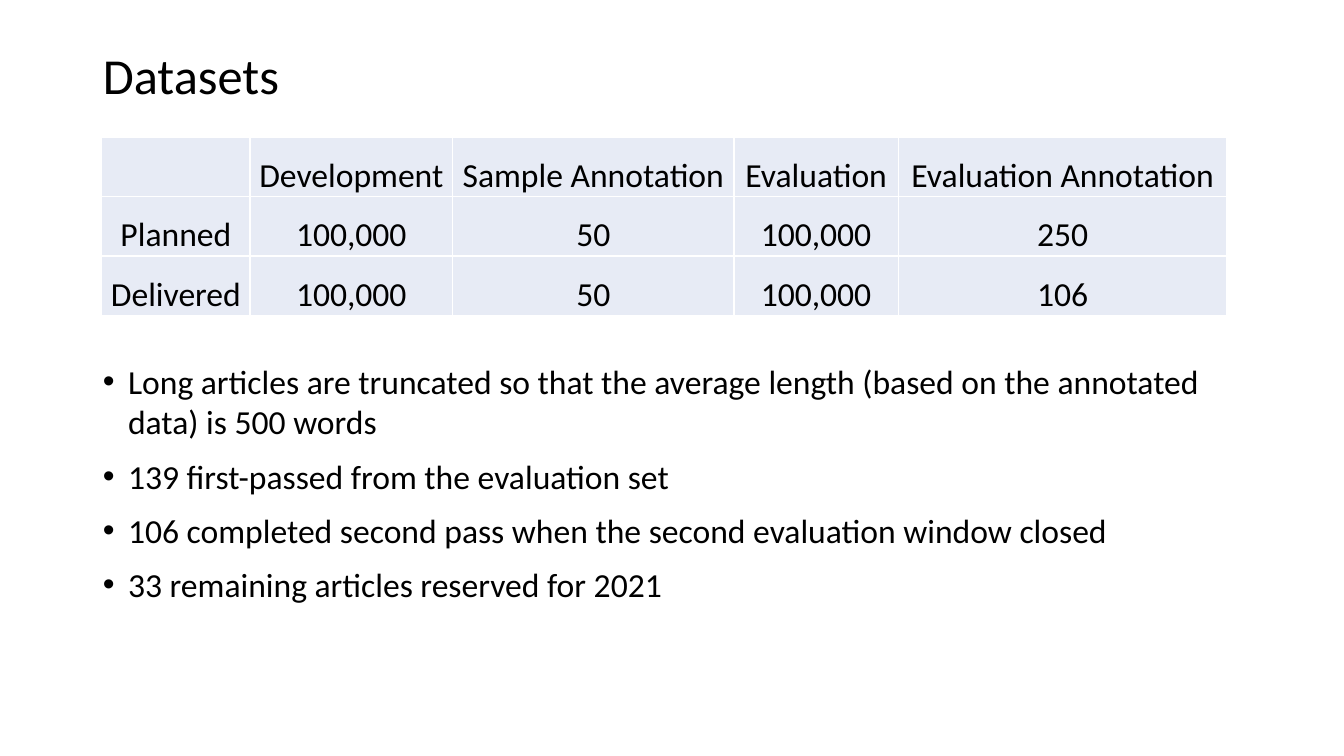
from lxml import etree
from pptx import Presentation
from pptx.dml.color import RGBColor
from pptx.enum.text import MSO_ANCHOR, MSO_AUTO_SIZE, PP_ALIGN
from pptx.oxml.ns import qn
from pptx.util import Inches, Pt

LEFT, CENTER = PP_ALIGN.LEFT, PP_ALIGN.CENTER
TOP, MIDDLE, BOTTOM = MSO_ANCHOR.TOP, MSO_ANCHOR.MIDDLE, MSO_ANCHOR.BOTTOM
NO_FIT = MSO_AUTO_SIZE.NONE

# Content
TITLE = "Datasets"
ROWS = [
    ["", "Development", "Sample Annotation", "Evaluation", "Evaluation Annotation"],
    ["Planned", "100,000", "50", "100,000", "250"],
    ["Delivered", "100,000", "50", "100,000", "106"],
]
BULLETS = [
    "Long articles are truncated so that the average length "
    "(based on the annotated data) is 500 words",
    "139 first-passed from the evaluation set",
    "106 completed second pass when the second evaluation window closed",
    "33 remaining articles reserved for 2021",
]

# Layout in inches
SLIDE_WIDTH, SLIDE_HEIGHT = 13.33, 7.5
MARGIN, CONTENT_WIDTH = 0.92, 11.5
TITLE_BOX = (MARGIN, 0.4, CONTENT_WIDTH, 0.75)
BODY_BOX = (MARGIN, 3.53, CONTENT_WIDTH, 3.23)
TABLE_LEFT, TABLE_TOP = 1.01, 1.36
COLUMN_WIDTHS = [1.47, 2.01, 2.79, 1.63, 3.26]
ROW_HEIGHT = 0.59
BULLET_INDENT = 0.25

# Formats
FONT, TEXT, CELL, BORDER = "Calibri", "000000", "E7EBF5", "FFFFFF"
CELL_FORMAT = {
    "vertical_anchor": BOTTOM,
    "margin_left": Inches(0.01),
    "margin_right": Inches(0.01),
    "margin_top": Inches(0.01),
    "margin_bottom": 0,
}


def color(value):
    return RGBColor.from_string(value)


def apply(target, values):
    for name, value in values.items():
        setattr(target, name, value)


def format_paragraph(paragraph, size, **values):
    apply(paragraph, values)
    apply(paragraph.font, {"name": FONT, "size": Pt(size), "bold": False})
    paragraph.font.color.rgb = color(TEXT)


def place(shape, box, anchor):
    names = ("left", "top", "width", "height")
    apply(shape, dict(zip(names, map(Inches, box))))
    apply(shape.text_frame, {"vertical_anchor": anchor, "word_wrap": True,
                             "auto_size": NO_FIT})


def add_bullet(paragraph):
    properties = paragraph._p.get_or_add_pPr()
    properties.set("marL", str(Inches(BULLET_INDENT)))
    properties.set("indent", str(-Inches(BULLET_INDENT)))
    etree.SubElement(properties, qn("a:buFont")).set("typeface", "Arial")
    etree.SubElement(properties, qn("a:buChar")).set("char", "•")


def add_borders(cell):
    properties = cell._tc.get_or_add_tcPr()
    for index, side in enumerate(("a:lnL", "a:lnR", "a:lnT", "a:lnB")):
        line = etree.Element(qn(side), w=str(Pt(1)))
        fill = etree.SubElement(line, qn("a:solidFill"))
        etree.SubElement(fill, qn("a:srgbClr")).set("val", BORDER)
        properties.insert(index, line)


def add_dataset_table(slide):
    frame = slide.shapes.add_table(
        len(ROWS), len(COLUMN_WIDTHS), Inches(TABLE_LEFT), Inches(TABLE_TOP),
        Inches(sum(COLUMN_WIDTHS)), Inches(ROW_HEIGHT * len(ROWS)))
    table = frame.table
    apply(table, {"first_row": False, "horz_banding": False})
    for column, width in zip(table.columns, COLUMN_WIDTHS):
        column.width = Inches(width)
    for row, texts in zip(table.rows, ROWS):
        row.height = Inches(ROW_HEIGHT)
        for cell, text in zip(row.cells, texts):
            cell.text = text
            apply(cell, CELL_FORMAT)
            cell.fill.solid()
            cell.fill.fore_color.rgb = color(CELL)
            add_borders(cell)
            format_paragraph(cell.text_frame.paragraphs[0], 24, alignment=CENTER)


def main():
    presentation = Presentation()
    presentation.slide_width = Inches(SLIDE_WIDTH)
    presentation.slide_height = Inches(SLIDE_HEIGHT)
    slide = presentation.slides.add_slide(presentation.slide_layouts[1])
    slide.background.fill.solid()
    slide.background.fill.fore_color.rgb = color("FFFFFF")

    # Title
    title = slide.shapes.title
    title.text = TITLE
    place(title, TITLE_BOX, MIDDLE)
    format_paragraph(title.text_frame.paragraphs[0], 36,
                     alignment=LEFT, line_spacing=0.9)

    # Bullet list
    body = slide.placeholders[1]
    body.text = "\n".join(BULLETS)
    place(body, BODY_BOX, TOP)
    for index, paragraph in enumerate(body.text_frame.paragraphs):
        add_bullet(paragraph)
        format_paragraph(paragraph, 24, alignment=LEFT,
                         space_before=Pt(10 if index else 0))

    # Table
    add_dataset_table(slide)
    presentation.save("out.pptx")


if __name__ == "__main__":
    main()
